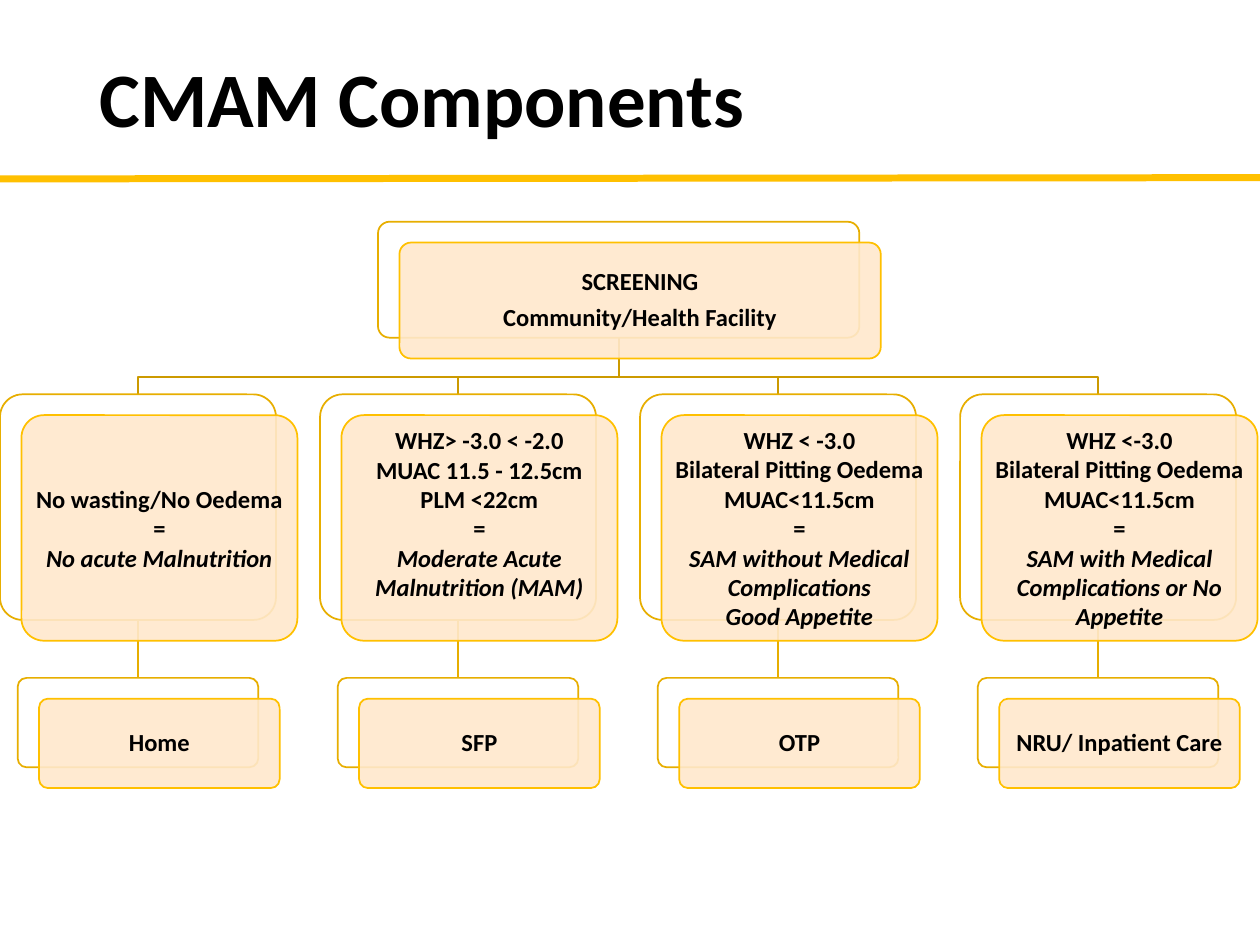
from lxml.etree import SubElement
from pptx import Presentation
from pptx.dml.color import RGBColor
from pptx.enum.shapes import MSO_CONNECTOR as Link, MSO_SHAPE as Preset
from pptx.enum.text import MSO_ANCHOR as Anchor, PP_ALIGN as Align
from pptx.oxml.ns import qn
from pptx.util import Inches, Pt

GOLD, DARK_GOLD, TRUNK_GOLD = "FFC000", "E7AE00", "CC9A00"
CREAM, WHITE, BLACK = "FFE8CC", "FFFFFF", "000000"
SHIFT_X, SHIFT_Y = 0.17, 0.165
PITCH = 2.54
ROOT_BOX = (3, 1.76, 3.82, 0.92)
CATEGORY_TOP, CATEGORY_W, CATEGORY_H = 3.13, 2.19, 1.79
CARE_TOP, CARE_W, CARE_H = 5.38, 1.91, 0.71

BRANCHES = [
    (["No wasting/No Oedema", "="], ["No acute Malnutrition"], "Home", 0.06),
    (["WHZ> -3.0 < -2.0", "MUAC 11.5 - 12.5cm", "PLM <22cm", "="],
     ["Moderate Acute Malnutrition (MAM)"], "SFP", 0.29),
    (["WHZ < -3.0", "Bilateral Pitting Oedema", "MUAC<11.5cm", "="],
     ["SAM without Medical Complications", "Good Appetite"], "OTP", 0.06),
    (["WHZ <-3.0", "Bilateral Pitting Oedema", "MUAC<11.5cm", "="],
     ["SAM with Medical Complications or No Appetite"], "NRU/ Inpatient Care", 0.06),
]


def rgb(value):
    return RGBColor.from_string(value)


def add_text(paragraph, wording, size, italic=None):
    run = paragraph.add_run()
    run.text = wording
    run.font.name = "Calibri"
    run.font.size = Pt(size)
    run.font.bold = True
    run.font.italic = italic
    run.font.color.rgb = rgb(BLACK)


def add_line(slide, start, end, color, width):
    line = slide.shapes.add_connector(
        Link.STRAIGHT, *(Inches(v) for v in (*start, *end)))
    line.line.color.rgb = rgb(color)
    line.line.width = Pt(width)
    SubElement(line._element.spPr, qn("a:effectLst"))
    return line


def add_header(slide, left, top, width, height):
    add_line(slide, (0, 1.42), (10, 1.41), GOLD, 4)
    title = slide.shapes.add_textbox(*map(Inches, (left, top, width, height)))
    frame = title.text_frame
    frame.word_wrap = True
    frame.vertical_anchor = Anchor.MIDDLE
    frame.paragraphs[0].line_spacing = 0.9
    add_text(frame.paragraphs[0], "CMAM Components", 44)


def add_panel(slide, left, top, width, height, fill, outline):
    panel = slide.shapes.add_shape(
        Preset.ROUNDED_RECTANGLE, *map(Inches, (left, top, width, height)))
    panel.adjustments[0] = 0.1
    panel.shadow.inherit = False
    panel.fill.solid()
    panel.fill.fore_color.rgb = rgb(fill)
    panel.line.color.rgb = rgb(outline)
    panel.line.width = Pt(1)
    return panel


def add_card(slide, box, plain, italic=(), spaced=True, bottom=0.06):
    left, top, width, height = box
    back = add_panel(slide, *box, WHITE, DARK_GOLD)
    front = add_panel(slide, left + SHIFT_X, top + SHIFT_Y, width, height, CREAM, GOLD)
    cream = front._element.spPr.find(qn("a:solidFill"))[0]
    SubElement(cream, qn("a:alpha")).set("val", "90000")
    frame = front.text_frame
    frame.word_wrap = True
    frame.vertical_anchor = Anchor.MIDDLE
    frame.margin_left = frame.margin_right = Inches(0.05)
    frame.margin_top, frame.margin_bottom = Inches(0.06), Inches(bottom)
    for i, wording in enumerate([*plain, *italic]):
        paragraph = frame.paragraphs[0] if i == 0 else frame.add_paragraph()
        paragraph.alignment = Align.CENTER
        if spaced:
            paragraph.line_spacing = 0.9
            paragraph.space_after = Pt(4.9)
        add_text(paragraph, wording, 14, True if i >= len(plain) else None)
    return back


def add_trunk(slide, start, end, bend):
    (x1, y1), (x2, y2) = start, end
    corners = [(x1, bend), (x2, bend), (x2, y2)]
    builder = slide.shapes.build_freeform(Inches(x1), Inches(y1))
    builder.add_line_segments([(Inches(x), Inches(y)) for x, y in corners], close=False)
    trunk = builder.convert_to_shape()
    trunk.shadow.inherit = False
    trunk.fill.background()
    trunk.line.color.rgb = rgb(TRUNK_GOLD)
    trunk.line.width = Pt(1)


def add_tree(slide, left):
    root_x, root_y = ROOT_BOX[0] + ROOT_BOX[2] / 2, ROOT_BOX[1] + ROOT_BOX[3]
    centers = [left + CATEGORY_W / 2 + i * PITCH for i in range(len(BRANCHES))]
    links = []
    for center in centers:
        add_trunk(slide, (root_x, root_y), (center, CATEGORY_TOP), 2.99)
        links.append(add_line(slide, (center, CATEGORY_TOP + CATEGORY_H),
                              (center, CARE_TOP), DARK_GOLD, 1))
    add_card(slide, ROOT_BOX, ["SCREENING", "Community/Health Facility"])
    for center, link, (criteria, diagnosis, care, bottom) in zip(centers, links, BRANCHES):
        category_box = (center - CATEGORY_W / 2, CATEGORY_TOP, CATEGORY_W, CATEGORY_H)
        care_box = (center - CARE_W / 2, CARE_TOP, CARE_W, CARE_H)
        category_card = add_card(slide, category_box, criteria, diagnosis, False, bottom)
        care_card = add_card(slide, care_box, [care])
        link.begin_connect(category_card, 2)
        link.end_connect(care_card, 0)


def main():
    deck = Presentation()
    deck.slide_width, deck.slide_height = Inches(10), Inches(7.5)
    slide = deck.slides.add_slide(deck.slide_layouts[6])
    add_header(slide, 0.69, 0.4, 8.62, 0.83)
    add_tree(slide, 0)
    deck.save("out.pptx")


if __name__ == "__main__":
    main()
